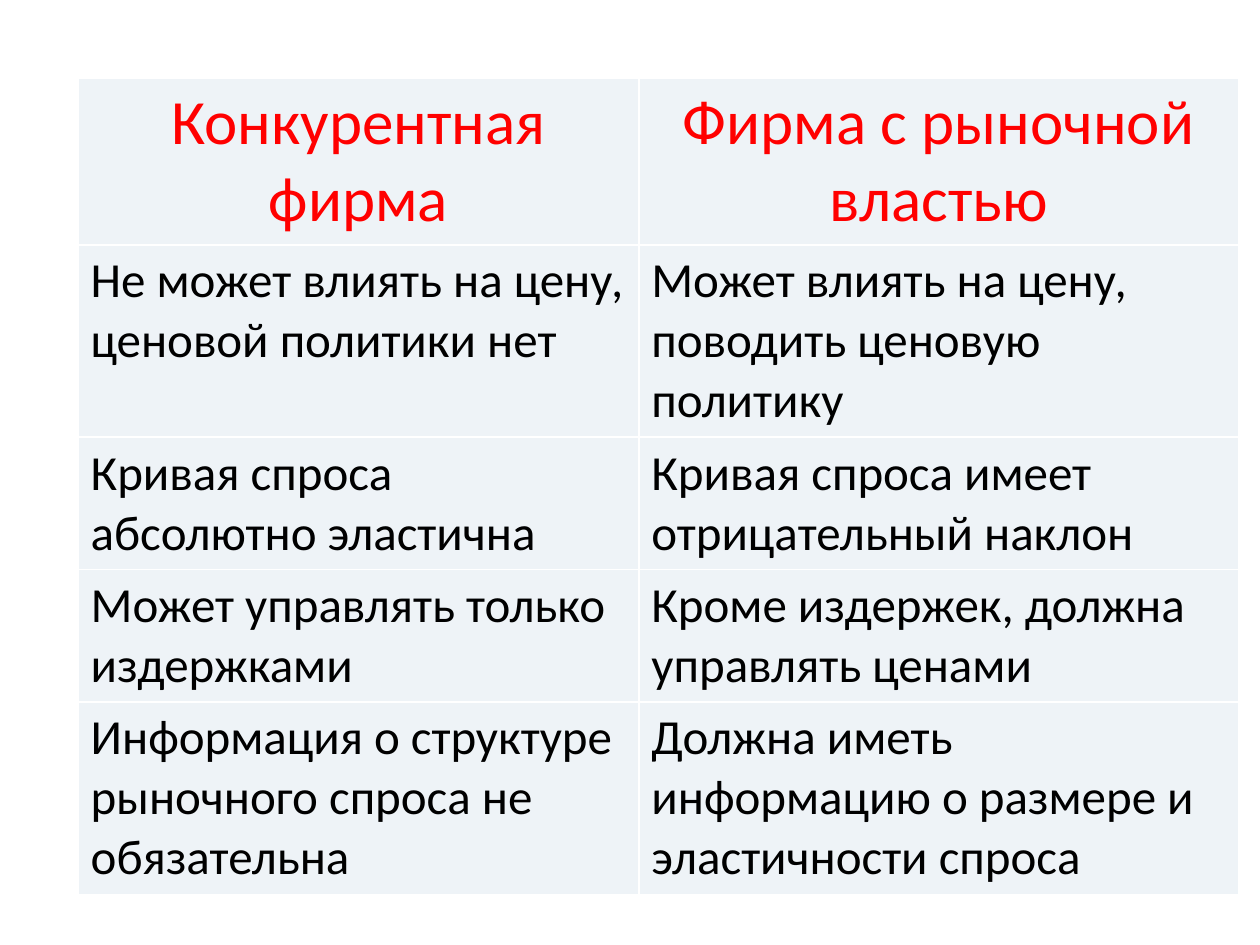
from dataclasses import dataclass

from lxml import etree
from pptx import Presentation
from pptx.dml.color import RGBColor
from pptx.enum.text import PP_ALIGN
from pptx.oxml.ns import qn
from pptx.util import Inches, Pt

LEFT, CENTER = PP_ALIGN.LEFT, PP_ALIGN.CENTER


@dataclass(frozen=True)
class Theme:
    font: str = "Calibri"
    header_size: int = 36
    body_size: int = 28
    header_color: str = "FF0000"
    body_color: str = "000000"
    cell_fill: str = "EEF3F7"
    border: str = "FFFFFF"
    border_width: int = 1
    space_before: int = 20


COLUMNS = (4.45, 4.76)
ROWS = (1.18, 1.36, 0.94, 0.94, 1.36)
COMPARISON = (
    ("Конкурентная фирма", "Фирма с рыночной властью"),
    ("Не может влиять на цену, ценовой политики нет",
     "Может влиять на цену, поводить ценовую политику"),
    ("Кривая спроса абсолютно эластична",
     "Кривая спроса имеет отрицательный наклон"),
    ("Может управлять только издержками",
     "Кроме издержек, должна управлять ценами"),
    ("Информация о структуре рыночного спроса не обязательна",
     "Должна иметь информацию о размере и эластичности спроса"),
)


def write_text(tf, text, *, font, size, color, align=LEFT, space_before=0):
    p = tf.paragraphs[0]
    p.alignment = align
    spacing = etree.SubElement(p._p.get_or_add_pPr(), qn("a:spcBef"))
    etree.SubElement(spacing, qn("a:spcPct"), val=str(space_before * 1000))
    r = p.add_run()
    r.text = text
    r.font.name = font
    r.font.size = Pt(size)
    r.font.bold = False
    r.font.color.rgb = RGBColor.from_string(color)


class SlideBuilder:
    """Draws styled elements on the current slide."""

    def __init__(self, slide, theme):
        self.slide = slide
        self.theme = theme

    def borders(self, cell):
        tc_pr = cell._tc.get_or_add_tcPr()
        for side in ("lnL", "lnR", "lnT", "lnB"):
            ln = etree.SubElement(tc_pr, qn(f"a:{side}"),
                                  w=str(Pt(self.theme.border_width)))
            fill = etree.SubElement(ln, qn("a:solidFill"))
            etree.SubElement(fill, qn("a:srgbClr"), val=self.theme.border)

    def cell(self, cell, text, header):
        t = self.theme
        self.borders(cell)
        cell.fill.solid()
        cell.fill.fore_color.rgb = RGBColor.from_string(t.cell_fill)
        write_text(cell.text_frame, text, font=t.font,
                   size=t.header_size if header else t.body_size,
                   color=t.header_color if header else t.body_color,
                   align=CENTER if header else LEFT,
                   space_before=t.space_before)

    def table(self, data, left, top, height, columns, rows):
        sp = self.slide.shapes.add_table(
            len(rows), len(columns), Inches(left), Inches(top),
            Inches(sum(columns)), Inches(height))
        table = sp.table
        table.first_row = table.horz_banding = False
        for column, width in zip(table.columns, columns):
            column.width = Inches(width)
        for i, (row, row_height) in enumerate(zip(table.rows, rows)):
            row.height = Inches(row_height)
            for cell, text in zip(row.cells, data[i]):
                self.cell(cell, text, header=i == 0)
        sp.height = Inches(height)


def main():
    prs = Presentation()
    prs.slide_width, prs.slide_height = Inches(10), Inches(7.5)
    s = prs.slides.add_slide(prs.slide_layouts[6])
    SlideBuilder(s, Theme()).table(COMPARISON, 0.62, 0.62, 6.37, COLUMNS, ROWS)
    prs.save("out.pptx")


if __name__ == "__main__":
    main()
